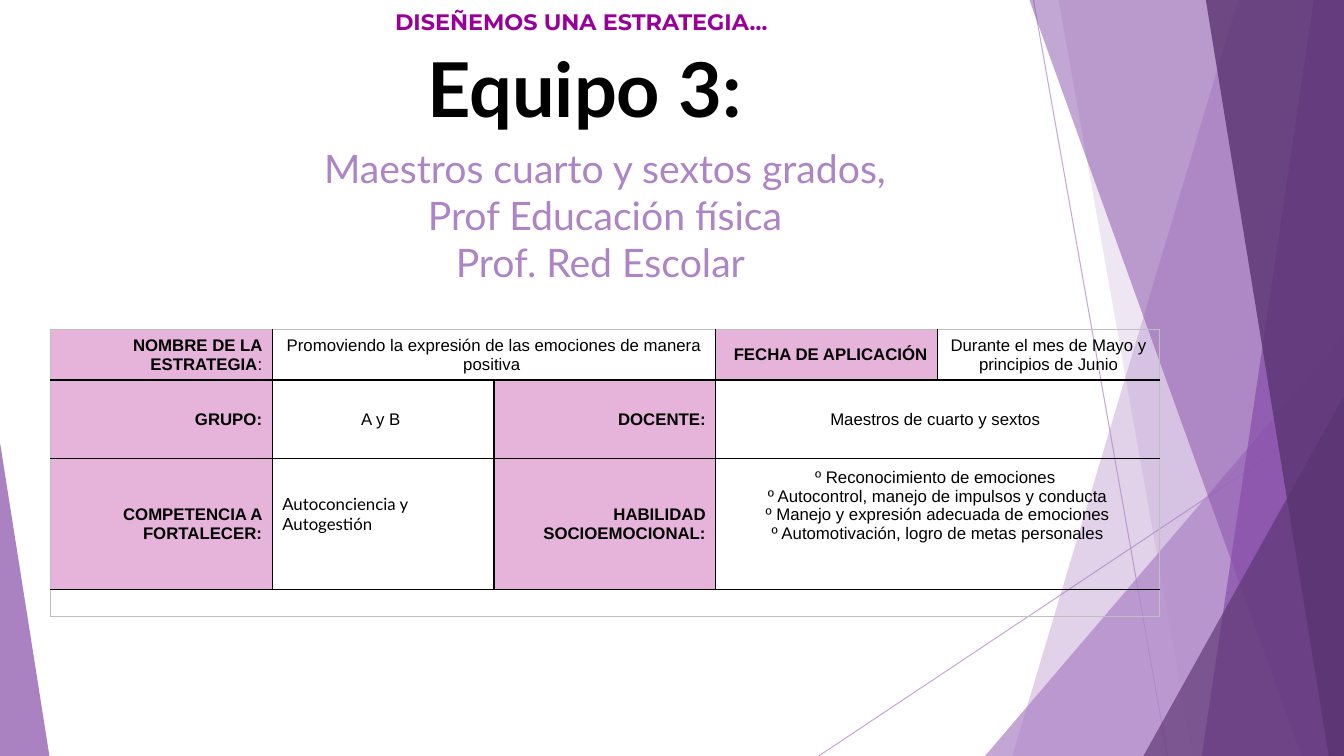
from lxml import etree
from pptx import Presentation
from pptx.dml.color import RGBColor
from pptx.enum import shapes as sh, text as tx
from pptx.oxml import ns
from pptx.util import Inches, Pt

LILAC = RGBColor(0xAD, 0x84, 0xC6)
VIOLET = RGBColor(0x87, 0x4E, 0xA9)
PLUM = RGBColor(0x5A, 0x34, 0x71)
PINK = RGBColor(0xE6, 0xB4, 0xDB)
MAGENTA = RGBColor(0x99, 0x00, 0x99)
BLACK = RGBColor(0, 0, 0)
GREY = RGBColor(0xBF, 0xBF, 0xBF)
WIDE, HIGH = 13.33, 7.5

# Content: rays (x1, y1, x2, y2)
RAYS = [(10.25, 0, 11.58, HIGH), (WIDE, 4.03, 8.12, HIGH)]
# Bands reach the right edge: top x, bottom x, colour, opacity
# Wedges: left, top, width, apex position, colour, opacity
DECOR = [
    ("band", 12.28, 10.04, LILAC, 36),
    ("band", 10.5, 11.83, LILAC, 20),
    ("wedge", 9.77, 3.33, 3.56, 1, LILAC, 72),
    ("band", 10.21, 12.91, VIOLET, 50),
    ("band", 13.03, 11.92, VIOLET, 70),
    ("band", 11.96, 13.18, PLUM, 80),
    ("wedge", 11.34, 3.93, 1.99, 1, PLUM, 66),
    ("wedge", 0, 4.39, 0.49, 0, VIOLET, 70),
]
# Headings: box, lines, font, size, bold, colour, alignment
LEFT, MID, RIGHT = tx.PP_ALIGN.LEFT, tx.PP_ALIGN.CENTER, tx.PP_ALIGN.RIGHT
HEADS = [
    ((3.82, 0.03, 4.36, 0.37), ["DISEÑEMOS UNA ESTRATEGIA…"],
     "Montserrat", 16, True, MAGENTA, LEFT),
    ((3.99, 0.37, 3.8, 1.01), ["Equipo 3: "], "Lato", 54, True, BLACK, MID),
    ((3.04, 1.38, 5.92, 1.51),
     ["Maestros cuarto y sextos grados,", "Prof Educación física",
      "Prof. Red Escolar "], "Lato", 28, False, LILAC, MID),
]
# Table cells: text, kind, columns spanned, bottom margin
SKILLS = "\n".join([
    "º Reconocimiento de emociones ",
    "º Autocontrol, manejo de impulsos y conducta",
    "º Manejo y expresión adecuada de emociones",
    "º Automotivación, logro de metas personales"])
ROWS = [
    (0.5, [("NOMBRE DE LA ESTRATEGIA:", "label", 1, 0.05),
           ("Promoviendo la expresión de las emociones de manera positiva ",
            "value", 2, 0.05),
           ("FECHA DE APLICACIÓN", "label", 1, 0.05),
           ("Durante el mes de Mayo y principios de Junio", "value", 1, 0.05)]),
    (0.78, [("GRUPO:", "label", 1, 0.05), ("A y B ", "value", 1, 0.05),
            ("DOCENTE:", "label", 1, 0.05),
            ("Maestros de cuarto y sextos ", "value", 2, 0.05)]),
    (1.3, [("COMPETENCIA A FORTALECER:", "label", 1, 0.05),
           ("Autoconciencia y Autogestión", "note", 1, 0.25),
           ("HABILIDAD SOCIOEMOCIONAL:", "label", 1, 0.05),
           (SKILLS, "value", 2, 0.42)]),
    (0.27, [("", "value", 5, 0.05)]),
]
# Kind: font, bold, alignment
KINDS = {"label": ("Arial", True, RIGHT), "value": ("Arial", False, MID),
         "note": ("Lato", False, LEFT)}
COLS, COL = 5, 2.2


def fade(props, pct):
    color = props.find(".//" + ns.qn("a:srgbClr"))
    etree.SubElement(color, ns.qn("a:alpha"), val=str(pct * 1000))


def style(para, font, size, bold, color, align):
    para.alignment = align
    for item in [para.font] + [run.font for run in para.runs]:
        item.name, item.size, item.bold = font, Pt(size), bold
        item.color.rgb = color


def edge(cell, side, color):
    line = etree.SubElement(cell._tc.get_or_add_tcPr(),
                            ns.qn("a:ln" + side), w=str(Pt(1)))
    fill = etree.SubElement(line, ns.qn("a:solidFill"))
    etree.SubElement(fill, ns.qn("a:srgbClr"), val=str(color))


def add_rays(slide):
    for ray in RAYS:
        line = slide.shapes.add_connector(
            sh.MSO_CONNECTOR.STRAIGHT, *map(Inches, ray))
        line.line.color.rgb = LILAC
        line.line.width = Pt(0.75)
        props = line._element.spPr
        fade(props, 70)
        etree.SubElement(props, ns.qn("a:effectLst"))


def add_decor(slide):
    for kind, *geo, color, pct in DECOR:
        if kind == "band":
            top, low = geo
            pen = slide.shapes.build_freeform(Inches(top), 0)
            pen.add_line_segments([(Inches(x), Inches(y)) for x, y in (
                (WIDE, 0), (WIDE, HIGH), (low, HIGH))])
            shape = pen.convert_to_shape()
        else:
            left, top, width, apex = geo
            shape = slide.shapes.add_shape(
                sh.MSO_SHAPE.ISOSCELES_TRIANGLE,
                *map(Inches, (left, top, width, HIGH - top)))
            shape.adjustments[0] = apex
        shape.shadow.inherit = False
        shape.fill.solid()
        shape.fill.fore_color.rgb = color
        fade(shape._element.spPr, pct)
        shape.line.fill.background()


def add_heads(slide):
    for box, lines, *look in HEADS:
        frame = slide.shapes.add_textbox(*map(Inches, box)).text_frame
        frame.word_wrap = True
        frame.text = "\n".join(lines)
        for para in frame.paragraphs:
            style(para, *look)


def add_grid(slide):
    total = sum(high for high, _ in ROWS)
    table = slide.shapes.add_table(
        len(ROWS), COLS, *map(Inches, (0.5, 3.27, COLS * COL, total))).table
    table.first_row = table.horz_banding = False
    for col in table.columns:
        col.width = Inches(COL)
    for r, (high, items) in enumerate(ROWS):
        table.rows[r].height = Inches(high)
        c = 0
        for words, kind, span, low in items:
            cell, end = table.cell(r, c), c + span
            # Outer edges are grey, inner edges black
            ends = {"L": c == 0, "R": end == COLS,
                    "T": r == 0, "B": r == len(ROWS) - 1}
            for k in range(c, end):
                for side, outer in ends.items():
                    if k == c or side in "TB" or side == "R" and k == end - 1:
                        edge(table.cell(r, k), side, GREY if outer else BLACK)
            if span > 1:
                cell.merge(table.cell(r, end - 1))
            if kind == "label":
                cell.fill.solid()
                cell.fill.fore_color.rgb = PINK
            else:
                cell.fill.background()
            cell.vertical_anchor = tx.MSO_ANCHOR.MIDDLE
            cell.margin_bottom = Inches(low)
            cell.text_frame.text = words
            font, bold, align = KINDS[kind]
            for para in cell.text_frame.paragraphs:
                style(para, font, 12 if words else 10, bold, BLACK, align)
            c = end
    # The first label ends in a light colon
    para = table.cell(0, 0).text_frame.paragraphs[0]
    para.runs[0].text = para.text[:-1]
    colon = para.add_run()
    colon.text = ":"
    style(para, "Arial", 12, True, BLACK, RIGHT)
    colon.font.bold = False


def main():
    deck = Presentation()
    deck.slide_width, deck.slide_height = Inches(WIDE), Inches(HIGH)
    slide = deck.slides.add_slide(deck.slide_layouts[6])
    add_rays(slide)
    add_decor(slide)
    add_grid(slide)
    add_heads(slide)
    deck.save("out.pptx")


if __name__ == "__main__":
    main()
